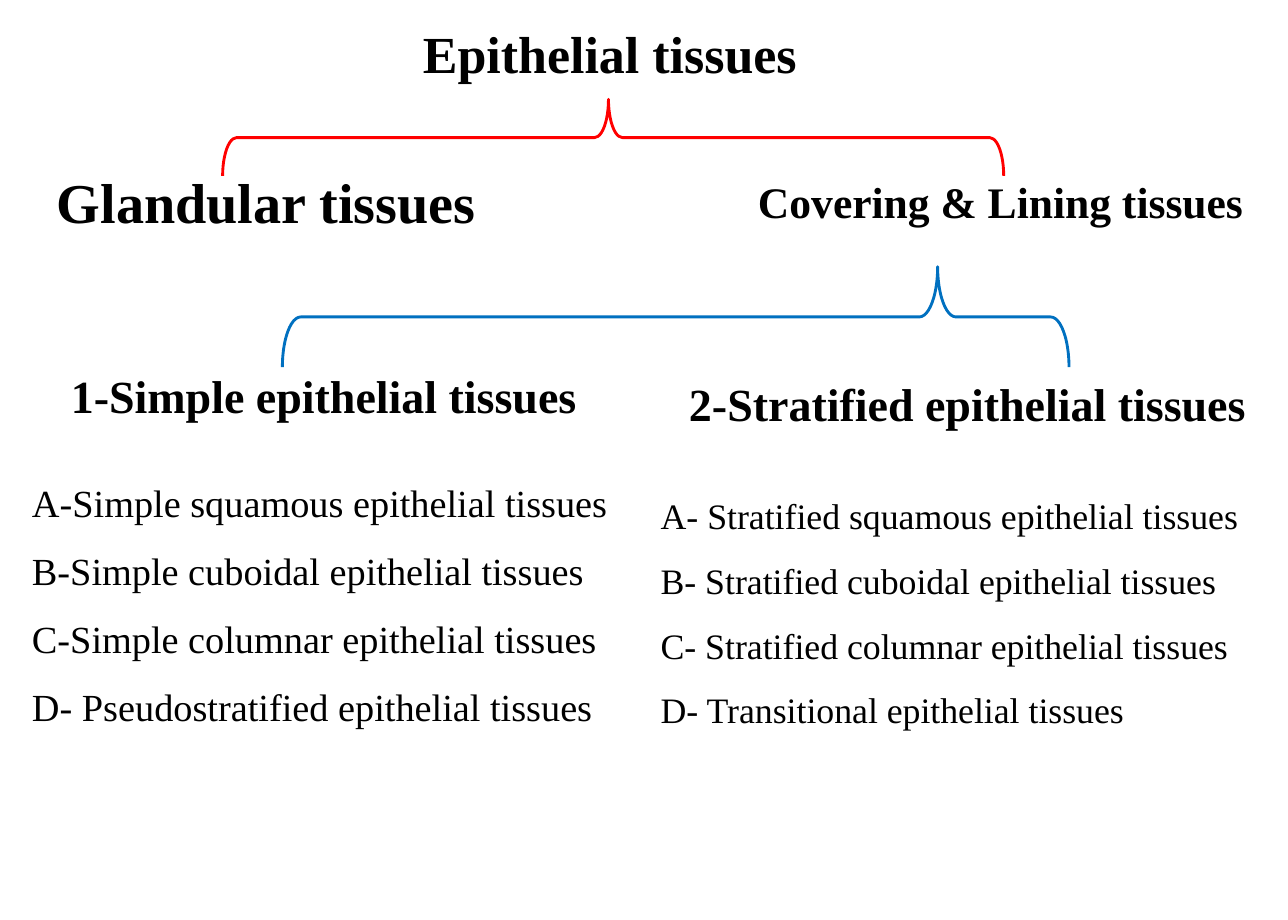
from pptx import Presentation
from pptx.dml.color import RGBColor
from pptx.enum.shapes import MSO_SHAPE
from pptx.enum.text import MSO_ANCHOR, PP_ALIGN
from pptx.util import Pt

TOP, MIDDLE = MSO_ANCHOR.TOP, MSO_ANCHOR.MIDDLE
JUSTIFY = PP_ALIGN.JUSTIFY
BRACE = MSO_SHAPE.LEFT_BRACE
BLACK = RGBColor(0x00, 0x00, 0x00)
RED = RGBColor(0xFF, 0x00, 0x00)
BLUE = RGBColor(0x00, 0x70, 0xC0)
FONT = "Times New Roman"

# Headings: text, (left, top, width, height), size, anchor, line spacing
HEADINGS = [
    ("Epithelial tissues", (321, 17.3, 327, 71.3), 40.7, TOP, 0.9),
    ("Glandular tissues", (34.5, 125.3, 349, 71.3), 44, MIDDLE, 0.9),
    ("Covering & Lining tissues", (583.2, 137.5, 408, 49.7), 34.1, MIDDLE, 0.7),
    ("1-Simple epithelial tissues", (45.4, 287.3, 433, 71.3), 36, TOP, 0.9),
    ("2-Stratified epithelial tissues", (529.2, 293.8, 470, 71.3), 36, TOP, 0.9),
]

# Lists: lines, (left, top, width, height), size
LISTS = [
    (["A-Simple squamous epithelial tissues",
      "B-Simple cuboidal epithelial tissues",
      "C-Simple columnar epithelial tissues",
      "D- Pseudostratified epithelial tissues"], (15, 364.3, 479, 237), 30),
    (["A- Stratified squamous epithelial tissues",
      "B- Stratified cuboidal epithelial tissues",
      "C- Stratified columnar epithelial tissues",
      "D- Transitional epithelial tissues"], (507, 376.6, 480, 235.4), 28),
]

# Braces as seen: (left, top, width, height), tip as a share from the right, colour
BRACES = [
    ((174.2, 77.8, 611.3, 59.8), 0.506, RED),
    ((221, 208.8, 615.6, 78.5), 0.167, BLUE),
]


def add_text(lines, box, size, anchor=TOP, spacing=1.15, bold=False, align=None, gap=0):
    frame = slide.shapes.add_textbox(*map(Pt, box)).text_frame
    frame.word_wrap = True
    frame.vertical_anchor = anchor
    frame.margin_left = frame.margin_right = Pt(10)
    frame.margin_top = frame.margin_bottom = Pt(5)
    frame.text = "\n".join(lines)
    for index, line in enumerate(frame.paragraphs):
        line.alignment = align
        line.line_spacing = spacing
        line.space_before = Pt(gap if index else 0)
        line.space_after = Pt(gap)
        font = line.runs[0].font
        font.name, font.size, font.bold = FONT, Pt(size), bold
        font.color.rgb = BLACK


def add_brace(box, tip, color):
    left, top, width, height = box
    # A quarter turn about the centre swaps width and height
    shift = (width - height) / 2
    brace = slide.shapes.add_shape(
        BRACE, Pt(left + shift), Pt(top - shift), Pt(height), Pt(width))
    brace.rotation = 90
    brace.adjustments[0] = 0.183
    brace.adjustments[1] = tip
    brace.shadow.inherit = False
    brace.fill.background()
    brace.line.color.rgb = color
    brace.line.width = Pt(2.25)


presentation = Presentation()
presentation.slide_width, presentation.slide_height = Pt(1008), Pt(720)
slide = presentation.slides.add_slide(presentation.slide_layouts[6])

# Headings of the tree
for heading, box, size, anchor, spacing in HEADINGS:
    add_text([heading], box, size, anchor, spacing, bold=True)

# Tissue types under each branch
for lines, box, size in LISTS:
    add_text(lines, box, size, align=JUSTIFY, gap=6)

# Branches
for box, tip, color in BRACES:
    add_brace(box, tip, color)

presentation.save("out.pptx")
